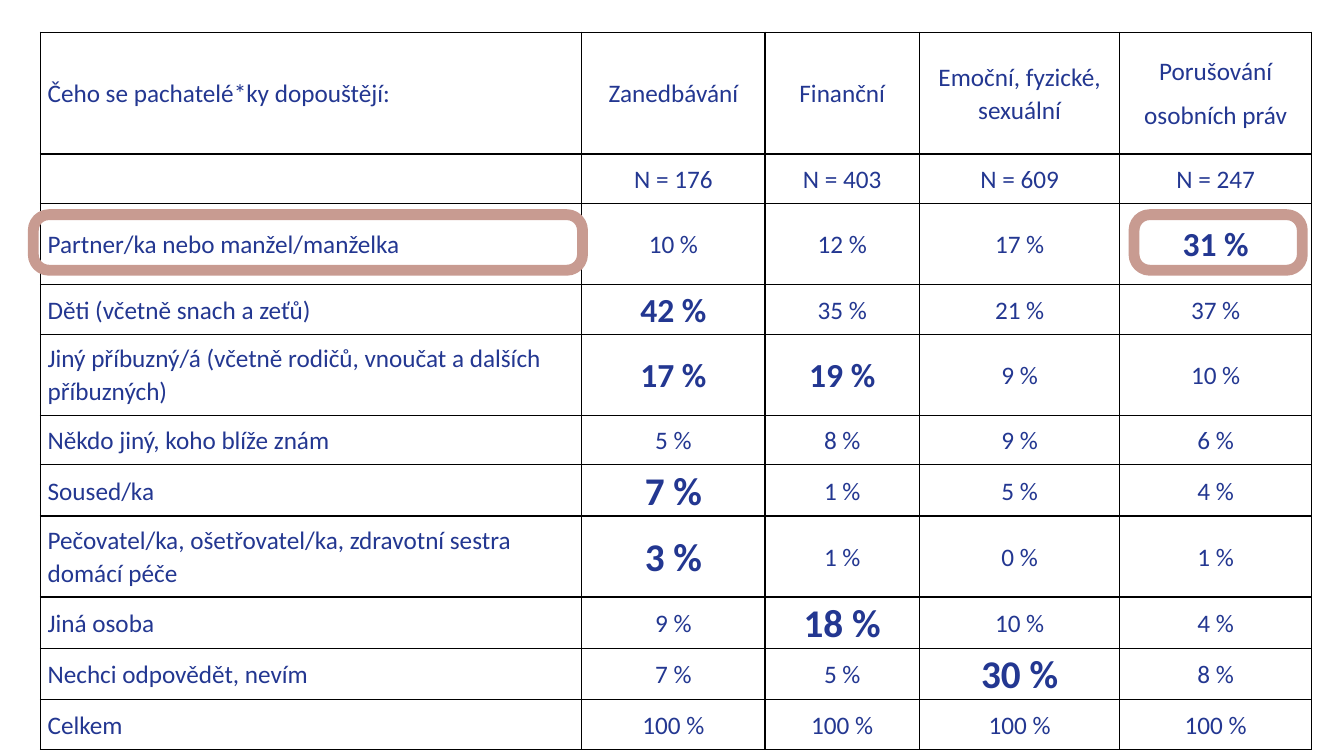
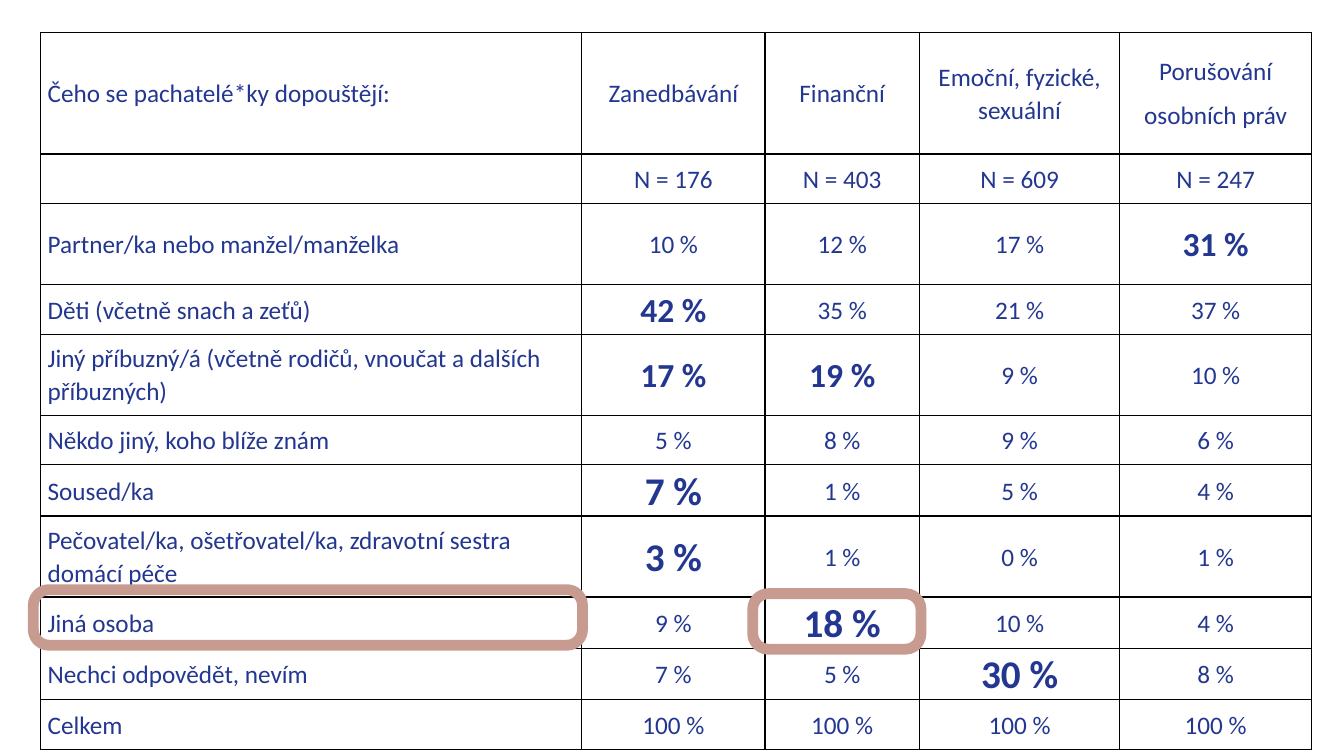
from pptx import Presentation
from pptx.dml.color import RGBColor
from pptx.enum.shapes import MSO_SHAPE
from pptx.enum.text import MSO_ANCHOR, PP_ALIGN
from pptx.oxml import parse_xml
from pptx.oxml.ns import nsdecls
from pptx.util import Cm, Pt

ROUNDED = MSO_SHAPE.ROUNDED_RECTANGLE
MIDDLE = MSO_ANCHOR.MIDDLE
LEFT, CENTER = PP_ALIGN.LEFT, PP_ALIGN.CENTER

COLORS = {"text": "233791", "border": "000000", "highlight": "C89B91"}
FONT = "Calibri"
BODY_SIZE = 18
BORDER_WIDTH = Pt(1)

ROWS = [
    ("Čeho se pachatelé*ky dopouštějí:", "Zanedbávání", "Finanční",
     "Emoční, fyzické, sexuální", "Porušování\nosobních práv"),
    ("", "N = 176", "N = 403", "N = 609", "N = 247"),
    ("Partner/ka nebo manžel/manželka", "10 %", "12 %", "17 %", "31 %"),
    ("Děti (včetně snach a zeťů)", "42 %", "35 %", "21 %", "37 %"),
    ("Jiný příbuzný/á (včetně rodičů, vnoučat a dalších příbuzných)",
     "17 %", "19 %", "9 %", "10 %"),
    ("Někdo jiný, koho blíže znám", "5 %", "8 %", "9 %", "6 %"),
    ("Soused/ka", "7 %", "1 %", "5 %", "4 %"),
    ("Pečovatel/ka, ošetřovatel/ka, zdravotní sestra domácí péče",
     "3 %", "1 %", "0 %", "1 %"),
    ("Jiná osoba", "9 %", "18 %", "10 %", "4 %"),
    ("Nechci odpovědět, nevím", "7 %", "5 %", "30 %", "8 %"),
    ("Celkem", "100 %", "100 %", "100 %", "100 %"),
]
EMPHASIS = {(2, 4): 24, (3, 1): 24, (4, 1): 24, (4, 2): 24,
            (6, 1): 28, (7, 1): 28, (8, 2): 28, (9, 3): 28}

TABLE_LEFT, TABLE_TOP = 1.02, 0.81
COLUMN_WIDTHS = [13.64, 4.62, 3.89, 5.05, 4.83]
HEADER_HEIGHT, SINGLE_HEIGHT, DOUBLE_HEIGHT = 3.07, 1.25, 2.04
DOUBLE_ROWS = {2, 4, 7}
ROW_HEIGHTS = [HEADER_HEIGHT] + [
    DOUBLE_HEIGHT if index in DOUBLE_ROWS else SINGLE_HEIGHT
    for index in range(1, len(ROWS))]

FRAME_HEIGHT = 1.4
LABEL_FRAME = (0.84, 13.84)
RIGHTS_FRAME = (28.58, 4.24)
FINANCE_FRAME = (18.97, 4.24)
SLIDES = [
    [(LABEL_FRAME, 5.41), (RIGHTS_FRAME, 5.41)],
    [(FINANCE_FRAME, 14.96), (LABEL_FRAME, 14.86)],
]


def color(name):
    return RGBColor.from_string(COLORS[name])


def add_borders(cell):
    properties = cell._tc.get_or_add_tcPr()
    for side in ("lnL", "lnR", "lnT", "lnB"):
        properties.append(parse_xml(
            f'<a:{side} {nsdecls("a")} w="{BORDER_WIDTH}"><a:solidFill>'
            f'<a:srgbClr val="{COLORS["border"]}"/></a:solidFill></a:{side}>'))


def fill_cell(cell, text, row, column):
    cell.margin_left = cell.margin_right = Cm(0.18)
    cell.margin_top = cell.margin_bottom = 0
    cell.vertical_anchor = MIDDLE
    add_borders(cell)
    cell.fill.background()
    frame = cell.text_frame
    for index, line in enumerate(text.split("\n")):
        paragraph = frame.add_paragraph() if index else frame.paragraphs[0]
        paragraph.alignment = CENTER if column else LEFT
        paragraph.line_spacing = 1.07
        paragraph.space_after = Pt(8 if row or column else 0)
        if line:
            run = paragraph.add_run()
            run.text = line
            run.font.name = FONT
            run.font.size = Pt(EMPHASIS.get((row, column), BODY_SIZE))
            run.font.bold = (row, column) in EMPHASIS
            run.font.color.rgb = color("text")


def add_perpetrator_table(slide):
    table = slide.shapes.add_table(
        len(ROWS), len(COLUMN_WIDTHS), Cm(TABLE_LEFT), Cm(TABLE_TOP),
        Cm(sum(COLUMN_WIDTHS)), Cm(sum(ROW_HEIGHTS))).table
    table.first_row = table.horz_banding = False
    for column, width in zip(table.columns, COLUMN_WIDTHS):
        column.width = Cm(width)
    for row, height in zip(table.rows, ROW_HEIGHTS):
        row.height = Cm(height)
    for row, values in enumerate(ROWS):
        for column, text in enumerate(values):
            fill_cell(table.cell(row, column), text, row, column)


def add_highlight(slide, left, top, width):
    shape = slide.shapes.add_shape(
        ROUNDED, Cm(left), Cm(top), Cm(width), Cm(FRAME_HEIGHT))
    shape.adjustments[0] = 0.28
    shape.shadow.inherit = False
    shape.fill.background()
    shape.line.color.rgb = color("highlight")
    shape.line.width = Pt(7.75)


def main():
    presentation = Presentation()
    presentation.slide_width = Cm(33.87)
    presentation.slide_height = Cm(19.05)
    blank_layout = presentation.slide_layouts[6]
    for highlights in SLIDES:
        slide = presentation.slides.add_slide(blank_layout)
        add_perpetrator_table(slide)
        for (left, width), top in highlights:
            add_highlight(slide, left, top, width)
    presentation.save("out.pptx")


if __name__ == "__main__":
    main()
